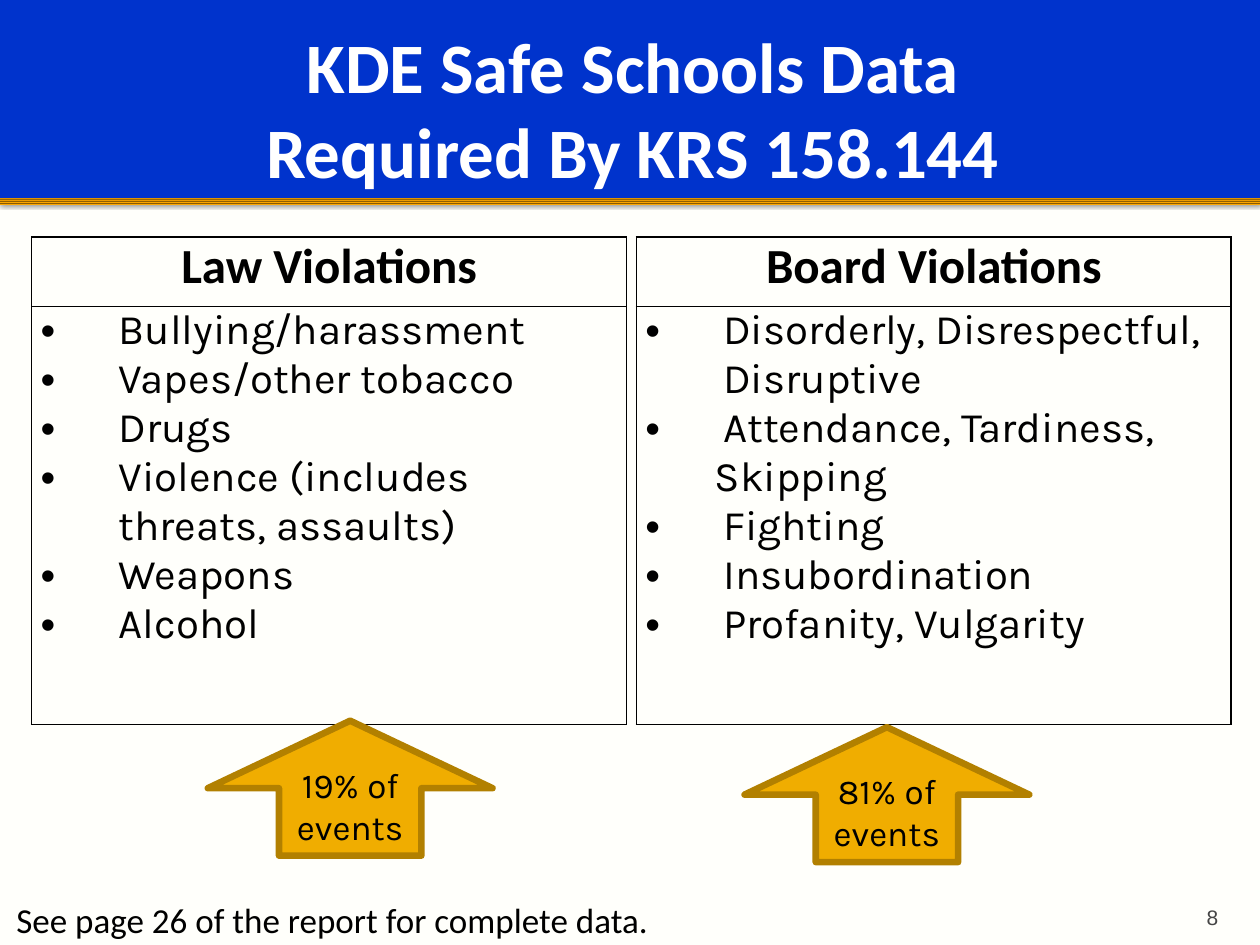
from pptx import Presentation
from pptx.dml.color import RGBColor
from pptx.enum.shapes import MSO_SHAPE
from pptx.enum.text import MSO_ANCHOR, PP_ALIGN
from pptx.oxml import parse_xml
from pptx.oxml.ns import nsdecls
from pptx.util import Cm, Pt

RECT, UP_ARROW = MSO_SHAPE.RECTANGLE, MSO_SHAPE.UP_ARROW
LEFT, CENTER, RIGHT = PP_ALIGN.LEFT, PP_ALIGN.CENTER, PP_ALIGN.RIGHT
TOP, MIDDLE, BOTTOM = MSO_ANCHOR.TOP, MSO_ANCHOR.MIDDLE, MSO_ANCHOR.BOTTOM

# Content
TITLE = "KDE Safe Schools Data\vRequired By KRS 158.144"
NOTE = "See page 26 of the report for complete data."
PAGE = "8"
CONTINUED = {"Skipping"}  # carries on the item above, so has no bullet
TABLES = [
    ("Law Violations", ["Bullying/harassment", "Vapes/other tobacco", "Drugs",
                        "Violence (includes threats, assaults)", "Weapons", "Alcohol"]),
    ("Board Violations", ["Disorderly, Disrespectful, Disruptive", "Attendance, Tardiness,",
                          "Skipping", "Fighting", "Insubordination", "Profanity, Vulgarity"]),
]
ARROWS = [("19% of events", 4.19, 14.53), ("81% of events", 15.01, 14.66)]

# Theme: colours and text formats
THEME = {
    "back": "FFFFFB", "banner": "0033CC", "arrow": "F0AD00", "edge": "B28000",
    "border": "000000", "stripes": ("825600", "FFA800"),
    "title": dict(name="Calibri", size=Pt(40.5), bold=True, color="FFFFFF"),
    "heading": dict(name="Calibri", size=Pt(28), bold=True, color="000000"),
    "item": dict(name="Karla", size=Pt(24), bold=False, color="000000"),
    "label": dict(name="Karla", size=Pt(20), bold=False, color="000000"),
    "note": dict(name="Calibri", size=Pt(20), bold=False, color="000000"),
    "page": dict(name="Arial", size=Pt(12), bold=False, color="454545"),
}
STRIPE_STOPS = (0, 13, 28, 43, 58, 72, 87, 100)

# Layout in centimetres
SLIDE_W, SLIDE_H, BANNER_H, STRIPE_H = 25.4, 19.05, 3.99, 0.13
TABLE_X, TABLE_Y, TABLE_W, TABLE_STEP = 0.64, 4.78, 11.99, 12.19
ROW_H = (1.4, 8.43)
ARROW_W, ARROW_H = 5.74, 2.72
CELL_INSET, INDENT, CONTINUED_INDENT = 0.18, 1.57, 1.4


def box(*lengths):
    return [Cm(v) for v in lengths]


def set_attrs(target, values):
    for key, value in values.items():
        setattr(target, key, value)


def write(p, text, style, align=LEFT):
    p.text = text
    p.alignment = align
    for r in p.runs:
        for key, value in THEME[style].items():
            if key == "color":
                r.font.color.rgb = RGBColor.from_string(value)
            else:
                setattr(r.font, key, value)


def add_shape(kind, place, fill):
    sp = slide.shapes.add_shape(kind, *box(*place))
    sp.shadow.inherit = False
    sp.fill.solid()
    sp.fill.fore_color.rgb = RGBColor.from_string(fill)
    sp.line.fill.background()
    return sp


def add_text(text, style, place, align, anchor, **insets):
    tf = slide.shapes.add_textbox(*box(*place)).text_frame
    set_attrs(tf, dict(word_wrap=True, vertical_anchor=anchor, **insets))
    write(tf.paragraphs[0], text, style, align)


def add_stripes():
    sp = add_shape(RECT, (0, BANNER_H, SLIDE_W, STRIPE_H), THEME["stripes"][1])
    stops = "".join(
        f'<a:gs pos="{pos * 1000}"><a:srgbClr val="{THEME["stripes"][i % 2]}"/></a:gs>'
        for i, pos in enumerate(STRIPE_STOPS))
    grad = parse_xml(f'<a:gradFill {nsdecls("a")} rotWithShape="1"><a:gsLst>{stops}</a:gsLst>'
                     '<a:lin ang="5400000" scaled="0"/></a:gradFill>')
    spPr = sp._element.spPr
    spPr.replace(spPr.find("{*}solidFill"), grad)
    spPr.find("{*}effectLst").append(parse_xml(
        f'<a:outerShdw {nsdecls("a")} blurRad="{Pt(2.5)}" dist="{Pt(0.8)}" dir="5400000">'
        '<a:srgbClr val="000000"><a:alpha val="60000"/></a:srgbClr></a:outerShdw>'))
    return sp


def format_cell(cell):
    cell.fill.background()
    set_attrs(cell, dict(margin_left=Cm(CELL_INSET), margin_right=Cm(CELL_INSET),
                         margin_top=0, margin_bottom=0, vertical_anchor=TOP))
    tcPr = cell._tc.get_or_add_tcPr()
    for i, side in enumerate("LRTB"):
        tcPr.insert(i, parse_xml(
            f'<a:ln{side} {nsdecls("a")} w="{Pt(1)}"><a:solidFill>'
            f'<a:srgbClr val="{THEME["border"]}"/></a:solidFill></a:ln{side}>'))


def indent_item(p, text):
    pPr = p._p.get_or_add_pPr()
    if text in CONTINUED:
        pPr.set("marL", str(Cm(CONTINUED_INDENT)))
        return
    pPr.set("marL", str(Cm(INDENT)))
    pPr.set("indent", str(-Cm(INDENT)))
    pPr.append(parse_xml(f'<a:buFont {nsdecls("a")} typeface="Arial"/>'))
    pPr.append(parse_xml(f'<a:buChar {nsdecls("a")} char="•"/>'))


def add_list_table(x, heading, items):
    table = slide.shapes.add_table(2, 1, *box(x, TABLE_Y, TABLE_W, sum(ROW_H))).table
    table.first_row = table.horz_banding = False
    for row, height in zip(table.rows, ROW_H):
        row.height = Cm(height)
        format_cell(row.cells[0])
    write(table.cell(0, 0).text_frame.paragraphs[0], heading, "heading", CENTER)
    tf = table.cell(1, 0).text_frame
    for i, text in enumerate(items):
        p = tf.add_paragraph() if i else tf.paragraphs[0]
        write(p, text, "item")
        indent_item(p, text)


prs = Presentation()
prs.slide_width, prs.slide_height = box(SLIDE_W, SLIDE_H)
slide = prs.slides.add_slide(prs.slide_layouts[5])
slide.background.fill.solid()
slide.background.fill.fore_color.rgb = RGBColor.from_string(THEME["back"])

# Banner and stripes, then the title in front of them
stripes = add_stripes()
banner = add_shape(RECT, (0, 0, SLIDE_W, BANNER_H), THEME["banner"])
title = slide.shapes.title
for sp in (stripes, banner):
    title._element.addprevious(sp._element)
set_attrs(title, dict(zip(("left", "top", "width", "height"), box(1.27, 0.43, 22.86, 3.48))))
set_attrs(title.text_frame, dict(
    word_wrap=True, vertical_anchor=MIDDLE, margin_left=Cm(0.25), margin_right=Cm(0.13),
    margin_top=Cm(0.13), margin_bottom=Cm(0.13)))
write(title.text_frame.paragraphs[0], TITLE, "title", CENTER)

# Page number, tables and note
add_text(PAGE, "page", (22.78, 17.98, 2.03, 0.76), RIGHT, BOTTOM, margin_bottom=0)
for i, (heading, items) in enumerate(TABLES):
    add_list_table(TABLE_X + i * TABLE_STEP, heading, items)
add_text(NOTE, "note", (0.08, 17.98, 15.9, 1.12), LEFT, TOP)

# Arrows with the share of events
for text, x, y in ARROWS:
    sp = add_shape(UP_ARROW, (x, y, ARROW_W, ARROW_H), THEME["arrow"])
    sp.line.color.rgb = RGBColor.from_string(THEME["edge"])
    sp.line.width = Pt(3.78)
    set_attrs(sp.text_frame, dict(word_wrap=True, vertical_anchor=MIDDLE))
    write(sp.text_frame.paragraphs[0], text, "label", CENTER)

prs.save("out.pptx")
